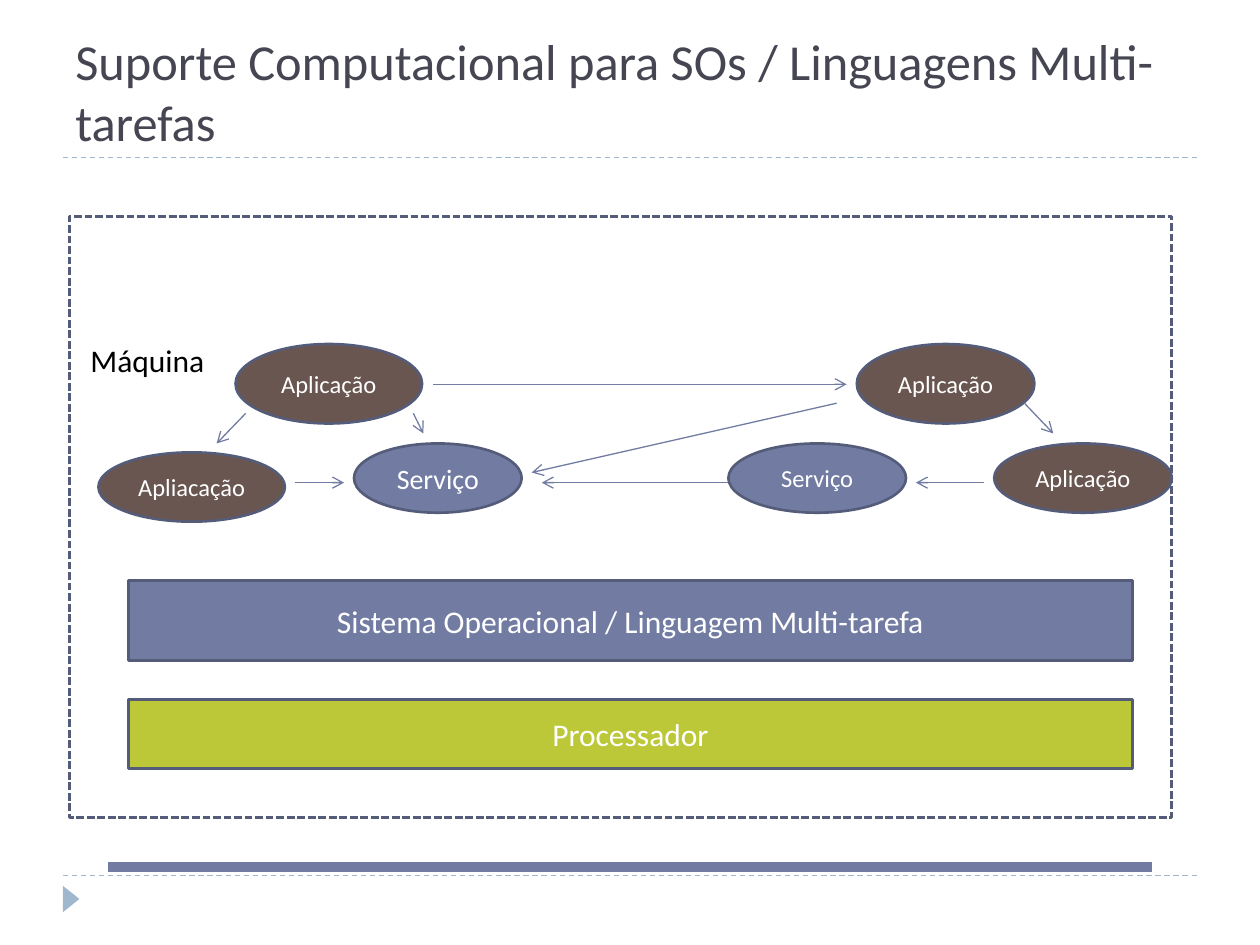
from pptx import Presentation
from pptx import util as u
from pptx.dml.color import RGBColor
from pptx.enum import dml, shapes, text
from pptx.oxml.ns import qn
from lxml import etree

Pt = u.Pt
KIND = shapes.MSO_SHAPE
DASH = dml.MSO_LINE
BLUE, BROWN, GREEN, EDGE = "727CA3", "6A5650", "BCC838", "545C79"
PALE, WHITE, BLACK, DARK = "9FB8CD", "FFFFFF", "000000", "464653"


def color(hexa):
    return RGBColor.from_string(hexa)


def write(frame, words, size, hexa):
    par = frame.paragraphs[0]
    run = par.add_run()
    run.text = words
    run.font.name = "Calibri"
    run.font.size = Pt(size)
    run.font.color.rgb = color(hexa)
    return par


def label(slide, box, words, size, hexa, anchor=text.MSO_ANCHOR.TOP):
    frame = slide.shapes.add_textbox(*map(Pt, box)).text_frame
    frame.word_wrap = True
    frame.vertical_anchor = anchor
    write(frame, words, size, hexa)


def block(slide, kind, box, fill, words="", size=18, edge=EDGE):
    shape = slide.shapes.add_shape(kind, *map(Pt, box))
    shape.shadow.inherit = False
    shape.fill.solid()
    shape.fill.fore_color.rgb = color(fill)
    if edge:
        shape.line.color.rgb = color(edge)
        shape.line.width = Pt(1.5)
    else:
        shape.line.fill.background()
    if words:
        frame = shape.text_frame
        frame.word_wrap = False
        frame.vertical_anchor = text.MSO_ANCHOR.MIDDLE
        write(frame, words, size, WHITE).alignment = text.PP_ALIGN.CENTER
    return shape


def rule(slide, ends, hexa, width=0.75, dash=None, arrow=False):
    line = slide.shapes.add_connector(
        shapes.MSO_CONNECTOR.STRAIGHT, *map(Pt, ends))
    line.line.color.rgb = color(hexa)
    line.line.width = Pt(width)
    if dash:
        line.line.dash_style = dash
    if arrow:
        tail = etree.SubElement(line.line._get_or_add_ln(), qn("a:tailEnd"))
        tail.set("type", "arrow")
    etree.SubElement(line._element.spPr, qn("a:effectLst"))


def main():
    deck = Presentation()
    deck.slide_width, deck.slide_height = Pt(720), Pt(540)
    slide = deck.slides.add_slide(deck.slide_layouts[6])

    # Page frame and title
    for y in (500.4, 90):
        rule(slide, (36, y, 684, y), PALE, dash=DASH.DASH)
    mark = block(slide, KIND.ISOSCELES_TRIANGLE, (33.1, 509, 15.1, 9.4),
                 PALE, edge=None)
    mark.rotation = 90
    label(slide, (36, 12.2, 648, 77.8),
          "Suporte Computacional para SOs / Linguagens Multi-tarefas",
          28.8, DARK, text.MSO_ANCHOR.BOTTOM)
    rule(slide, (61.9, 495.4, 658.1, 495.4), BLUE, 6)

    # Machine and its layers
    host = block(slide, KIND.RECTANGLE, (39.6, 123.8, 630, 343.4), WHITE)
    host.line.dash_style = DASH.SQUARE_DOT
    for y, high, fill, words in (
            (399.6, 39.6, GREEN, "Processador"),
            (331.9, 45.4, BLUE, "Sistema Operacional / Linguagem Multi-tarefa")):
        block(slide, KIND.RECTANGLE, (73.4, y, 573.8, high), fill, words)
    label(slide, (44.6, 191.5, 106.6, 28.8), "Máquina", 18, BLACK)

    # Applications and services
    for x, y, wide, high, fill, words, size in (
            (134.6, 196.6, 106.6, 45.4, BROWN, "Aplicação", 14),
            (489.6, 196.6, 101.5, 45.4, BROWN, "Aplicação", 14),
            (416.2, 253.4, 101.5, 39.6, BLUE, "Serviço", 14),
            (568.1, 253.4, 101.5, 39.6, BROWN, "Aplicação", 14),
            (56.2, 258.5, 106.6, 39.6, BROWN, "Apliacação", 14),
            (202.3, 253.4, 95.8, 39.6, BLUE, "Serviço", 16)):
        block(slide, KIND.OVAL, (x, y, wide, high), fill, words, size)

    # Calls between them
    for ends in (
            (140.4, 236.2, 123.8, 253.4),
            (168.5, 275.8, 196.6, 275.8),
            (236.2, 236.2, 241.9, 247.7),
            (247.7, 219.6, 483.8, 219.6),
            (478.1, 230.4, 303.8, 270),
            (562.3, 275.8, 523.4, 275.8),
            (416.2, 275.8, 309.6, 275.8),
            (585.4, 230.4, 601.9, 247.7)):
        rule(slide, ends, BLUE, arrow=True)

    deck.save("out.pptx")


if __name__ == "__main__":
    main()
